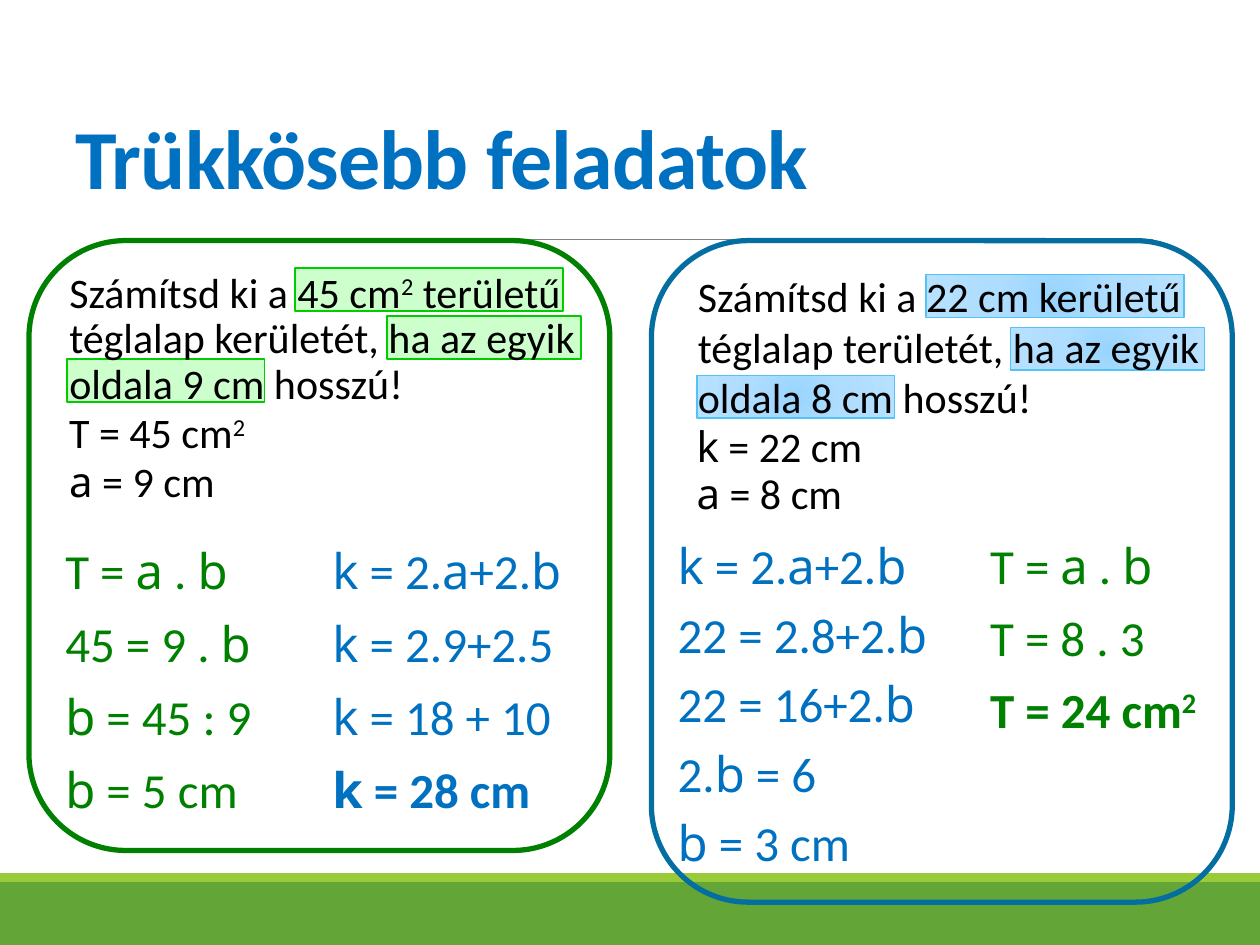
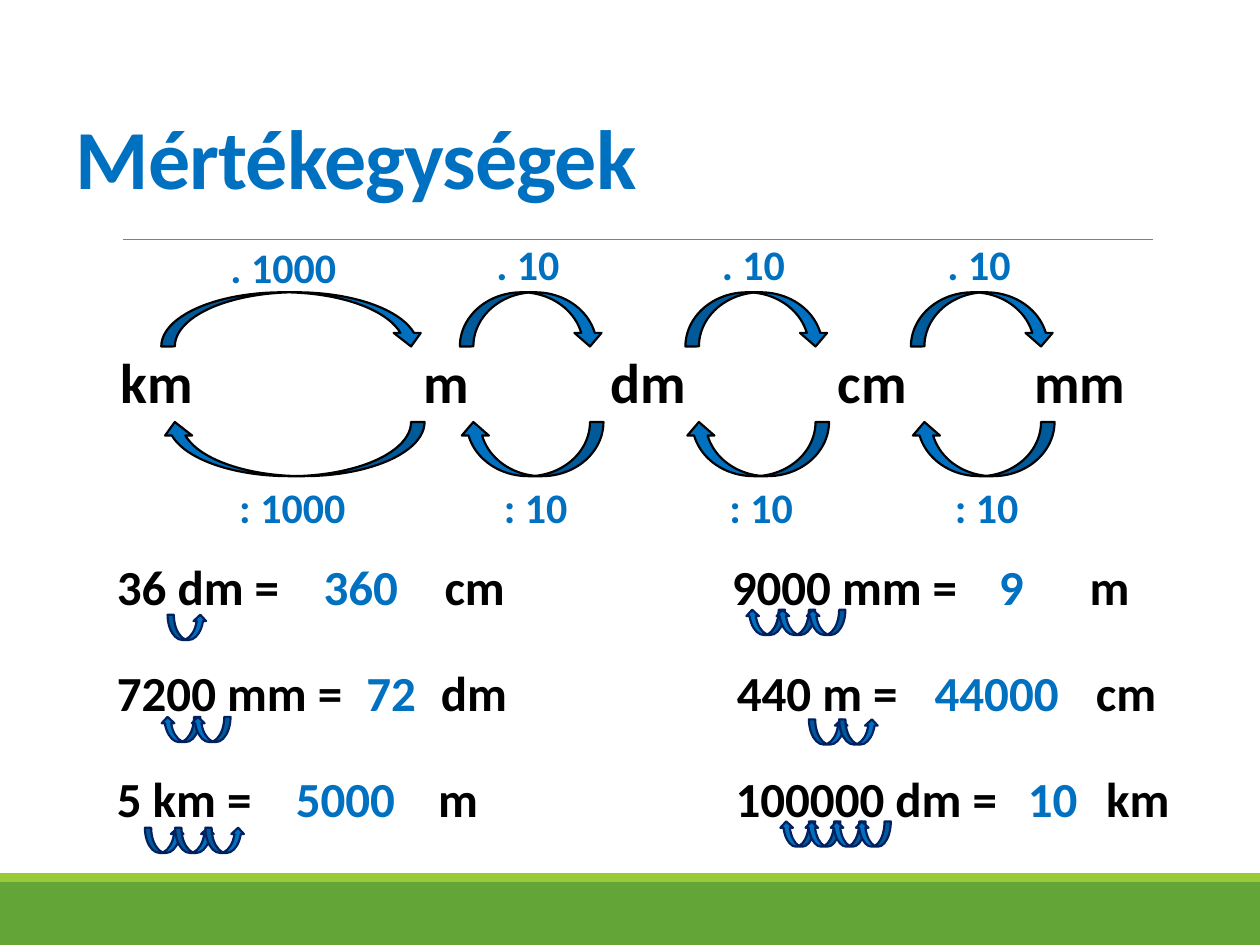
from itertools import groupby

from lxml import etree
from pptx import Presentation
from pptx.dml.color import RGBColor
from pptx.enum.shapes import MSO_CONNECTOR, MSO_SHAPE
from pptx.enum.text import MSO_ANCHOR, MSO_AUTO_SIZE, PP_ALIGN
from pptx.oxml import parse_xml
from pptx.oxml.ns import nsdecls, qn
from pptx.util import Inches, Pt

RECTANGLE = MSO_SHAPE.RECTANGLE
ROUNDED = MSO_SHAPE.ROUNDED_RECTANGLE
CURVED_ARROW = MSO_SHAPE.CURVED_DOWN_ARROW
STRAIGHT = MSO_CONNECTOR.STRAIGHT
BOTTOM = MSO_ANCHOR.BOTTOM
LEFT = PP_ALIGN.LEFT
FIT_SHAPE, FIT_NONE = MSO_AUTO_SIZE.SHAPE_TO_FIT_TEXT, MSO_AUTO_SIZE.NONE

BLACK, BLUE, GREEN, NAVY = "000000", "0070C0", "008000", "002060"
BAND_GREEN, BAND_LIME, RULE_GREY = "63A537", "99CB38", "808080"
FRAME_BLUE = "056EA0"
LIGHT_GREEN, MARK_GREEN, MARK_BLUE = "CCFFCC", "00CC00", "51C3F9"
SKY_STOPS = [(0, "99D5FE"), (45, "AEDDFF"), (100, "B8E1FF")]

TEXT_FONT, VARIABLE_FONT = "Calibri", "Noto Sans"
VARIABLES = "abk"
BACK, FORWARD = ("flipH", "flipV"), ("flipV",)


def color(value):
    return RGBColor.from_string(value)


def set_all(target, values):
    for name, value in values.items():
        setattr(target, name, value)


def split_runs(text, variables):
    """Yield (text, is_variable, is_raised); a caret raises the next character."""
    marked, raised = [], False
    for character in text:
        if character == "^":
            raised = True
            continue
        marked.append((character, character in variables, raised))
        raised = False
    for style, group in groupby(marked, key=lambda item: item[1:]):
        yield "".join(item[0] for item in group), *style


class Deck:
    def __init__(self):
        self.presentation = Presentation()
        self.presentation.slide_width = Inches(10)
        self.presentation.slide_height = Inches(7.5)
        self.layout = self.presentation.slide_layouts.get_by_name("Title Only")
        self.slide = None

    def add_slide(self, title):
        first = self.slide is None
        self.slide = self.presentation.slides.add_slide(self.layout)
        if first:
            self.decorate_layout()
        shape = self.slide.shapes.title
        set_all(shape, {"left": Inches(0.5), "top": Inches(0.44),
                        "width": Inches(9), "height": Inches(1.25)})
        set_all(shape.text_frame, {"vertical_anchor": BOTTOM, "auto_size": FIT_NONE})
        paragraph = shape.text_frame.paragraphs[0]
        set_all(paragraph, {"alignment": LEFT, "line_spacing": 0.85})
        self.add_runs(paragraph, title, 48, BLUE, bold=True)
        for run in paragraph.runs:
            run.font._element.set("spc", "-50")

    def decorate_layout(self):
        """Draw the bands and the rule, then move them behind the layout's content."""
        decorations = [
            self.shape(RECTANGLE, 0, 7, 10, 0.5, fill=BAND_GREEN),
            self.shape(RECTANGLE, 0, 6.93, 10, 0.07, fill=BAND_LIME),
            self.rule(0.98, 9.15, 1.9),
        ]
        tree = self.layout.shapes._spTree
        for position, decoration in enumerate(decorations, start=2):
            tree.insert(position, decoration._element)

    def rule(self, start, end, top):
        line = self.slide.shapes.add_connector(
            STRAIGHT, Inches(start), Inches(top), Inches(end), Inches(top))
        line.line.color.rgb = color(RULE_GREY)
        line.line.width = Pt(0.5)
        etree.SubElement(line._element.spPr, qn("a:effectLst"))
        return line

    def shape(self, kind, left, top, width, height, fill=None, line=None,
              line_width=1, flips=()):
        shape = self.slide.shapes.add_shape(
            kind, Inches(left), Inches(top), Inches(width), Inches(height))
        shape.shadow.inherit = False
        if isinstance(fill, list):
            self.radial_fill(shape, fill)
        elif fill:
            shape.fill.solid()
            shape.fill.fore_color.rgb = color(fill)
        else:
            shape.fill.background()
        if line:
            shape.line.color.rgb = color(line)
            shape.line.width = Pt(line_width)
        else:
            shape.line.fill.background()
        for flip in flips:
            shape._element.spPr.xfrm.set(flip, "1")
        return shape

    def radial_fill(self, shape, stops):
        stop_xml = "".join(
            f'<a:gs pos="{place * 1000}"><a:srgbClr val="{value}"/></a:gs>'
            for place, value in stops)
        gradient = parse_xml(
            f'<a:gradFill {nsdecls("a")}><a:gsLst>{stop_xml}</a:gsLst>'
            '<a:path path="circle"><a:fillToRect l="100000" t="100000" '
            'r="100000" b="100000"/></a:path></a:gradFill>')
        shape._element.spPr.insert(2, gradient)

    def add_runs(self, paragraph, text, size, ink, bold=False, variables=""):
        for part, is_variable, is_raised in split_runs(text, variables):
            run = paragraph.add_run()
            run.text = part
            set_all(run.font, {"name": VARIABLE_FONT if is_variable else TEXT_FONT,
                               "size": Pt(size), "bold": bold})
            run.font.color.rgb = color(ink)
            if is_raised:
                run.font._element.set("baseline", "30000")

    def text(self, text, left, top, width, height, size, ink, bold=False,
             variables="", wrap=False, margin=0.1):
        box = self.slide.shapes.add_textbox(
            Inches(left), Inches(top), Inches(width), Inches(height))
        set_all(box.text_frame, {
            "word_wrap": wrap, "auto_size": FIT_NONE if wrap else FIT_SHAPE,
            "margin_left": Inches(margin), "margin_right": Inches(margin)})
        paragraph = box.text_frame.paragraphs[0]
        self.add_runs(paragraph, text, size, ink, bold, variables)
        return paragraph

    def problem(self, text, left, top, height, margin, spacing):
        paragraph = self.text(text, left, top, 4.5, height, 24, BLACK,
                              wrap=True, margin=margin)
        set_all(paragraph, spacing)
        paragraph._p.get_or_add_pPr().set("marL", str(Inches(0.12)))

    def given(self, text, left, top, width):
        self.text(text, left, top, width, 0.5, 24, BLACK, variables=VARIABLES)

    def solution(self, left, top, step, ink, lines, bold_last=False):
        """Stack (formula, box width) lines at an even step."""
        for index, (formula, width) in enumerate(lines):
            bold = bold_last and index == len(lines) - 1
            self.text(formula, left, top + index * step, width, 0.57, 28, ink,
                      bold, VARIABLES)

    def tabbed(self, text, left, top, width, height, size, stops):
        paragraph = self.text(text, left, top, width, height, size, BLACK,
                              bold=True, wrap=True)
        tab_list = etree.SubElement(paragraph._p.get_or_add_pPr(), qn("a:tabLst"))
        for stop in stops:
            etree.SubElement(tab_list, qn("a:tab"), pos=str(Inches(stop)), algn="l")

    def arrow(self, left, top, width, height, line, flips=()):
        self.shape(CURVED_ARROW, left, top, width, height, BLUE, line, 1.25, flips)


def build_problems(deck):
    deck.add_slide("Trükkösebb feladatok")
    for left, top, width in [(7.35, 2.18, 2.05), (8.02, 2.6, 1.54), (5.53, 2.98, 1.57)]:
        deck.shape(RECTANGLE, left, top, width, 0.34, SKY_STOPS, MARK_BLUE)
    for left, top, width in [(3.07, 2.51, 1.54), (0.53, 2.85, 1.57), (2.34, 2.13, 2.13)]:
        deck.shape(RECTANGLE, left, top, width, 0.34, LIGHT_GREEN, MARK_GREEN)

    deck.problem("Számítsd ki a 45 cm^2 területű téglalap kerületét, "
                 "ha az egyik oldala 9 cm hosszú!", 0.43, 2.11, 1.29, 0,
                 {"line_spacing": 0.9, "space_before": Pt(12), "space_after": Pt(2)})
    deck.given("T = 45 cm^2", 0.45, 3.18, 1.63)
    deck.given("a = 9 cm", 0.45, 3.57, 1.4)
    deck.solution(0.42, 4.24, 0.58, GREEN, [
        ("T = a . b", 1.55), ("45 = 9 . b", 1.7), ("b = 45 : 9", 1.7),
        ("b = 5 cm", 1.59)])
    deck.solution(2.54, 4.24, 0.58, BLUE, [
        ("k = 2.a+2.b", 2.13), ("k = 2.9+2.5", 2.02), ("k = 18 + 10", 2),
        ("k = 28 cm", 1.8)], bold_last=True)
    deck.shape(ROUNDED, 0.23, 1.91, 4.61, 4.84, line=GREEN, line_width=3)

    deck.problem("Számítsd ki a 22 cm kerületű téglalap területét, "
                 "ha az egyik oldala 8 cm hosszú!", 5.32, 2.1, 1.46, 0.1,
                 {"space_before": Pt(4)})
    deck.given("k = 22 cm", 5.43, 3.29, 1.56)
    deck.given("a = 8 cm", 5.43, 3.66, 1.4)
    deck.solution(5.28, 4.2, 0.55, BLUE, [
        ("k = 2.a+2.b", 2.13), ("22 = 2.8+2.b", 2.21), ("22 = 16+2.b", 2.11),
        ("2.b = 6", 1.32), ("b = 3 cm", 1.59)])
    deck.solution(7.76, 4.2, 0.57, GREEN, [
        ("T = a . b", 1.55), ("T = 8 . 3", 1.45), ("T = 24 cm^2", 1.88)],
        bold_last=True)
    deck.shape(ROUNDED, 5.17, 1.91, 4.61, 5.25, line=FRAME_BLUE, line_width=3)


def build_units(deck):
    deck.add_slide("Mértékegységek")
    deck.tabbed("km\tm\tdm\tcm\tmm", 0.86, 2.71, 8.36, 0.64, 32,
                [2.4, 3.89, 5.69, 7.25])

    # factor, arrow left and width, label width, label offsets above and below
    steps = [("1000", 1.28, 2.09, 1.05, 0.45, 0.52)]
    steps += [("10", 3.65 + index * 1.79, 1.14, 0.71, 0.19, 0.25) for index in range(3)]
    for factor, left, width, label_width, above, below in steps:
        deck.arrow(left, 2.32, width, 0.43, BLACK)
        deck.arrow(left, 3.35, width, 0.43, BLACK, BACK)
        label_top = 1.87 if factor == "1000" else 1.84
        for text, offset, top in [(". ", above, label_top), (": ", below, 3.77)]:
            deck.text(text + factor, left + offset, top, label_width, 0.5, 24,
                      BLUE, bold=True)

    # given and unit, left, unit tab; answer, left, width; hops: left, top, count, way
    conversions = [
        ("36 dm =\tcm", 0.83, 2.6, "360", 2.47, 0.8, 1.33, 4.88, 1, FORWARD),
        ("7200 mm =\tdm", 0.83, 2.57, "72", 2.81, 0.6, 1.28, 5.69, 2, BACK),
        ("5 km =\tm", 0.83, 2.55, "5000", 2.25, 1, 1.15, 6.57, 3, FORWARD),
        ("9000 mm =\tm", 5.71, 2.84, "9", 7.83, 0.4, 5.92, 4.84, 3, BACK),
        ("440 m =\tcm", 5.75, 2.85, "44000", 7.32, 1.2, 6.42, 5.71, 2, FORWARD),
        ("100000 dm =\tkm", 5.74, 2.94, "10", 8.06, 0.6, 6.19, 6.52, 4, BACK),
    ]
    for index, (given, left, tab, answer, answer_left, answer_width,
                hop_left, hop_top, hops, way) in enumerate(conversions):
        top = 4.37 + index % 3 * 0.84
        deck.tabbed(given, left, top, 3.8, 0.57, 28, [tab])
        deck.text(answer, answer_left, top, answer_width, 0.57, 28, BLUE, bold=True)
        hop_width, hop_step = (0.28, 0.2) if hops == 4 else (0.31, 0.24)
        for hop in range(hops):
            deck.arrow(hop_left + hop * hop_step, hop_top, hop_width, 0.2, NAVY, way)


def main():
    deck = Deck()
    build_problems(deck)
    build_units(deck)
    deck.presentation.save("out.pptx")


if __name__ == "__main__":
    main()
